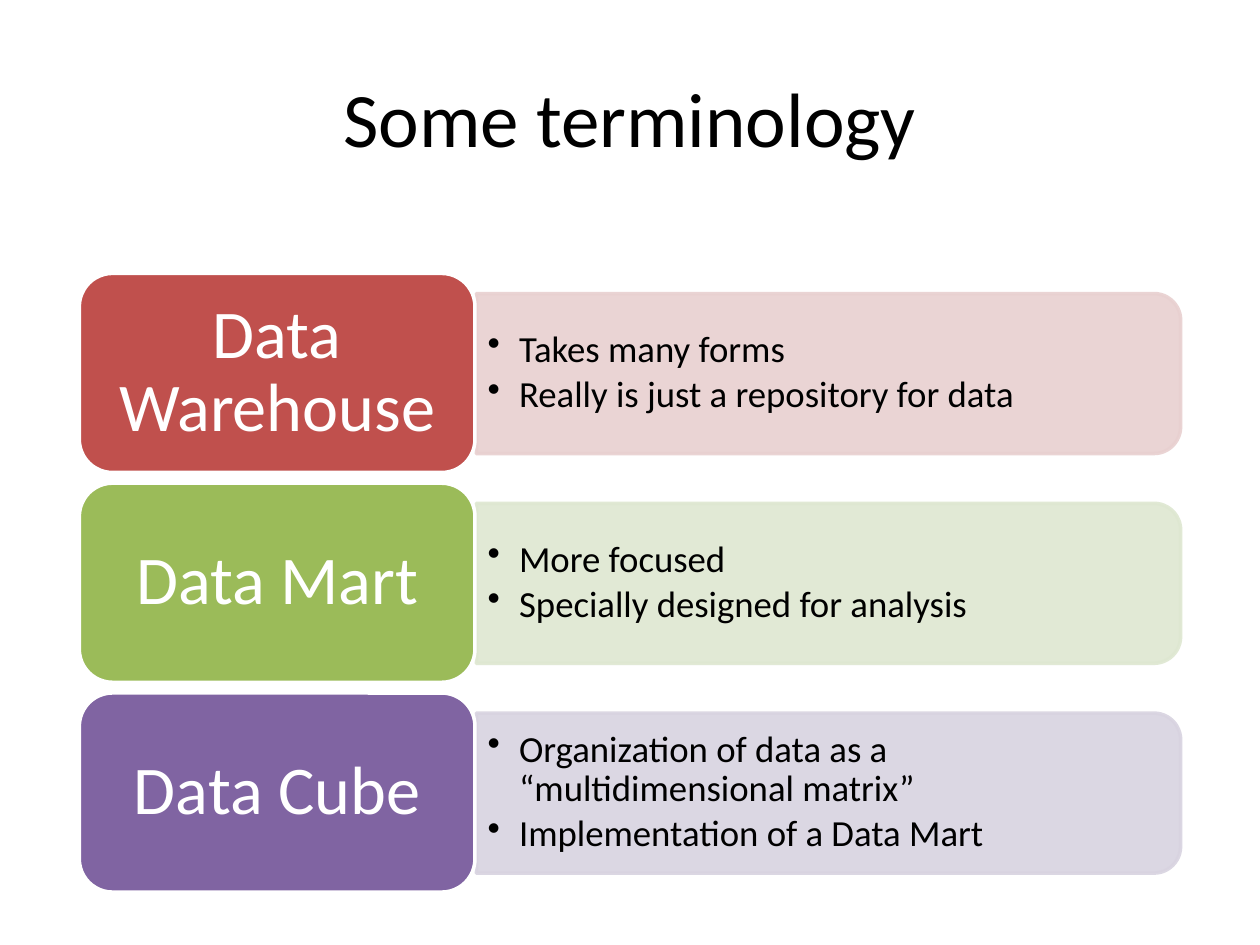
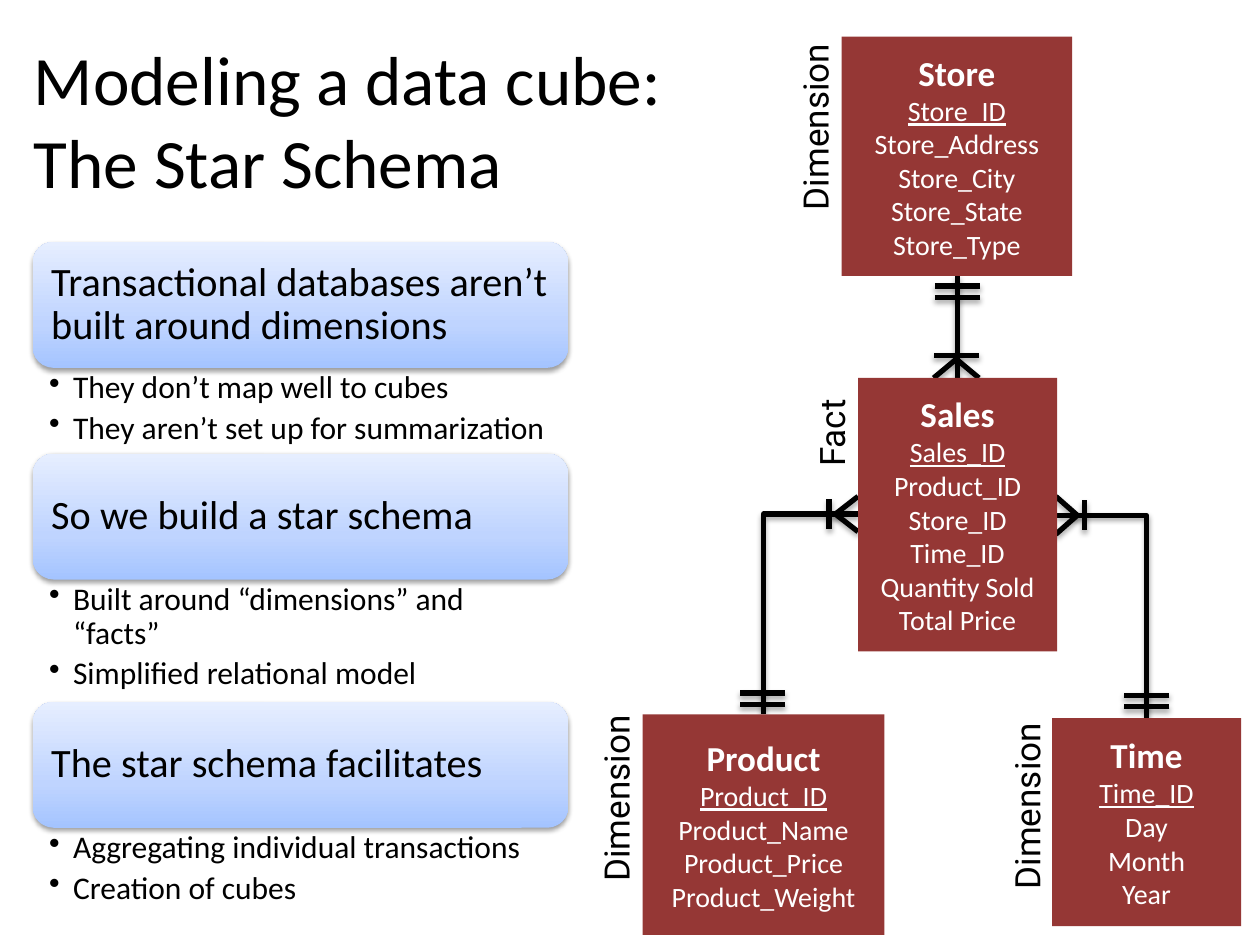
from lxml import etree
from pptx import Presentation
from pptx.dml.color import RGBColor
from pptx.enum import shapes, text
from pptx.oxml import ns
from pptx.util import Inches, Pt

COLORS = {
    "ink": "000000",
    "paper": "FFFFFF",
    "entity": "953735",
    "card": [(0, "A4C4FF"), (35, "BFD4FF"), (100, "E6EEFF")],
}
BODY_FONT, LABEL_FONT = "Calibri", "Roboto"
LEFT, CENTER, RIGHT = text.PP_ALIGN.LEFT, text.PP_ALIGN.CENTER, text.PP_ALIGN.RIGHT
TOP, MIDDLE = text.MSO_ANCHOR.TOP, text.MSO_ANCHOR.MIDDLE
DEFAULT_INSETS = (0.1, 0.05, 0.1, 0.05)

# term, fill, band fill, points
TERMS = [
    ("Data Warehouse", "C0504D", "E8D0D0",
     ["Takes many forms", "Really is just a repository for data"]),
    ("Data Mart", "9BBB59", "DEE7D1",
     ["More focused", "Specially designed for analysis"]),
    ("Data Cube", "8064A2", "D8D3E0",
     ["Organization of data as a “multidimensional matrix”",
      "Implementation of a Data Mart"]),
]

# heading, height of the points below it, points
CARDS = [
    ("Transactional databases aren’t built around dimensions", 0.68,
     ["They don’t map well to cubes", "They aren’t set up for summarization"]),
    ("So we build a star schema", 0.97,
     ["Built around “dimensions” and “facts”", "Simplified relational model"]),
    ("The star schema facilitates", 0.68,
     ["Aggregating individual transactions", "Creation of cubes"]),
]

# name, place, fields (the first is the key)
ENTITIES = [
    ("Product", (5.1, 5.67, 1.92, 1.75),
     ["Product_ID", "Product_Name", "Product_Price", "Product_Weight"]),
    ("Store", (6.68, 0.29, 1.83, 1.9),
     ["Store_ID", "Store_Address", "Store_City", "Store_State", "Store_Type"]),
    ("Time", (8.35, 5.7, 1.5, 1.65), ["Time_ID", "Day", "Month", "Year"]),
    ("Sales", (6.81, 3, 1.58, 2.17),
     ["Sales_ID", "Product_ID", "Store_ID", "Time_ID", "Quantity Sold", "Total Price"]),
]

ROLES = [
    ("Fact", (6.12, 3.33, 0.96, 0.44)),
    ("Dimension", (5.54, 0.96, 1.86, 0.44)),
    ("Dimension", (3.96, 6.29, 1.86, 0.44)),
    ("Dimension", (7.22, 6.35, 1.86, 0.44)),
]

# start, end, has a corner
RELATIONS = [
    ((7.6, 2.19), (7.6, 3), False),
    ((8.39, 4.09), (9.1, 5.7), True),
    ((6.81, 4.08), (6.06, 5.67), True),
]
# point on the entity's edge, direction away from the entity
ONE_ENDS = [((7.6, 2.19), (0, 1)), ((6.05, 5.67), (0, -1)), ((9.1, 5.69), (0, -1))]
# the same, then toe reach, toe spread, bar distance, bar half length
MANY_ENDS = [
    ((7.59, 3), (0, -1), 0.15, 0.18, 0.18, 0.18),
    ((6.81, 4.08), (-1, 0), 0.18, 0.14, 0.23, 0.12),
    ((8.38, 4.09), (1, 0), 0.17, 0.15, 0.23, 0.12),
]


def rgb(value):
    return RGBColor.from_string(value)


def sub(parent, tag, **attributes):
    """Append a DrawingML child element."""
    child = etree.SubElement(parent, ns.qn(tag))
    for name, value in attributes.items():
        child.set(name, str(value))
    return child


def add_shadow(shape, opacity, distance):
    effects = sub(shape._element.spPr, "a:effectLst")
    shadow = sub(effects, "a:outerShdw", blurRad=Pt(3.1), dist=Pt(distance),
                 dir=5400000, rotWithShape=0)
    color = sub(shadow, "a:srgbClr", val=COLORS["ink"])
    sub(color, "a:alpha", val=opacity * 1000)


def style_para(para, size, color="ink", font=BODY_FONT, bold=False, underline=False,
               align=LEFT, spacing=1.0, after=0.0, bullet=0):
    """Format a paragraph; after is a share of the size, bullet a hanging indent."""
    para.alignment = align
    para.line_spacing = spacing
    para.space_after = Pt(size * after)
    if bullet:
        properties = para._p.get_or_add_pPr()
        properties.set("marL", str(Inches(bullet)))
        properties.set("indent", str(-Inches(bullet)))
        sub(properties, "a:buChar", char="•")
    para.font.name = font
    para.font.size = Pt(size)
    para.font.bold = bold
    para.font.underline = underline
    para.font.color.rgb = rgb(COLORS[color])


def write(shape, lines, anchor=MIDDLE, insets=DEFAULT_INSETS):
    """Fill a shape with (wording, style) lines."""
    frame = shape.text_frame
    frame.word_wrap = True
    frame.vertical_anchor = anchor
    (frame.margin_left, frame.margin_top,
     frame.margin_right, frame.margin_bottom) = map(Inches, insets)
    for index, (wording, style) in enumerate(lines):
        para = frame.paragraphs[0] if index == 0 else frame.add_paragraph()
        para.text = wording
        style_para(para, **style)


def add_text(page, place, lines, **options):
    box = page.shapes.add_textbox(*map(Inches, place))
    write(box, lines, **options)
    return box


def add_shape(page, kind, place, fill=None, line=None):
    shape = page.shapes.add_shape(kind, *map(Inches, place))
    if fill:
        shape.shadow.inherit = False
        shape.fill.solid()
        shape.fill.fore_color.rgb = rgb(fill)
    if line:
        shape.line.color.rgb = rgb(line)
        shape.line.width = Pt(2)
    else:
        shape.line.fill.background()
    return shape


def add_title(page, place, wording, size, align):
    add_text(page, place, [(wording, dict(size=size, align=align))])


def add_band(page, place, color):
    band = add_shape(page, shapes.MSO_SHAPE.ROUND_2_SAME_RECTANGLE, place, color, color)
    band.rotation = 90
    for tone in band._element.spPr.iter(ns.qn("a:srgbClr")):
        sub(tone, "a:alpha", val=90000)


def add_card(page, place):
    card = add_shape(page, shapes.MSO_SHAPE.ROUNDED_RECTANGLE, place)
    card.fill.gradient()
    card.fill.gradient_angle = 90
    stops = card._element.spPr.find(".//" + ns.qn("a:gsLst"))
    for stop in list(stops):
        stops.remove(stop)
    for position, color in COLORS["card"]:
        sub(sub(stops, "a:gs", pos=position * 1000), "a:srgbClr", val=color)
    add_shadow(card, 38, 1.6)
    return card


def add_line(page, start, end, corner=False):
    kind = shapes.MSO_CONNECTOR.ELBOW if corner else shapes.MSO_CONNECTOR.STRAIGHT
    line = page.shapes.add_connector(kind, *map(Inches, (*start, *end)))
    if corner:
        line._element.spPr.find(ns.qn("a:prstGeom")).set("prst", "bentConnector2")
    line.line.color.rgb = rgb(COLORS["ink"])
    line.line.width = Pt(3)
    add_shadow(line, 35, 1.8)


def offset(point, direction, along, across):
    """Move along a direction and sideways from it."""
    (x, y), (dx, dy) = point, direction
    return x + dx * along + dy * across, y + dy * along + dx * across


def add_bar(page, point, direction, along, half):
    add_line(page, offset(point, direction, along, -half),
             offset(point, direction, along, half))


def build_terms(page):
    add_title(page, (0.5, 0.3, 9, 1.25), "Some terminology", 44, CENTER)
    pitch = 1.665
    for index, (term, fill, band, points) in enumerate(TERMS):
        shift = index * pitch
        add_band(page, (5.94, 0.17 + shift, 1.27, 5.59), band)
        point_style = dict(size=21, spacing=0.9, after=0.15, bullet=0.25)
        add_text(page, (3.78, 2.39 + shift, 5.53, 1.14),
                 [(point, point_style) for point in points],
                 insets=(0.09, 0.04, 0.09, 0.04))
        tile = add_shape(page, shapes.MSO_SHAPE.ROUNDED_RECTANGLE,
                         (0.63, 2.17 + shift, 3.14, 1.58), fill, COLORS["paper"])
        write(tile, [(term, dict(size=39, color="paper", align=CENTER,
                                 spacing=0.9, after=0.35))],
              insets=(0.16, 0.08, 0.16, 0.08))


def build_cards(page):
    left, top, width, height = 0.26, 1.92, 4.25, 1
    point_style = dict(size=18, spacing=0.9, after=0.2, bullet=0.19)
    for heading, points_height, points in CARDS:
        card = add_card(page, (left, top, width, height))
        write(card, [(heading, dict(size=23, spacing=0.9, after=0.35))],
              insets=(0.1, 0.1, 0.1, 0.1))
        add_text(page, (left, top + height, width, points_height),
                 [(point, point_style) for point in points],
                 anchor=TOP, insets=(0.13, 0.03, 0.18, 0.03))
        top += height + points_height


def build_star(page):
    for start, end, corner in RELATIONS:
        add_line(page, start, end, corner)
    for point, direction in ONE_ENDS:
        for along in (0.08, 0.17):
            add_bar(page, point, direction, along, 0.18)
    for point, direction, reach, spread, bar, half in MANY_ENDS:
        for side in (-spread, spread):
            add_line(page, offset(point, direction, reach, 0),
                     offset(point, direction, 0, side))
        add_bar(page, point, direction, bar, half)
    for name, place, fields in ENTITIES:
        entity = add_shape(page, shapes.MSO_SHAPE.RECTANGLE, place, COLORS["entity"])
        common = dict(color="paper", align=CENTER)
        lines = [(name, dict(size=20, bold=True, **common))]
        lines += [(field, dict(size=16, underline=field == fields[0], **common))
                  for field in fields]
        write(entity, lines)
    for role, place in ROLES:
        label = add_text(page, place,
                         [(role, dict(size=20, font=LABEL_FONT, align=RIGHT))], anchor=TOP)
        label.rotation = 270


def build_schema(page):
    add_title(page, (0.17, 0.32, 9.51, 1.25),
              "Modeling a data cube:\vThe Star Schema", 39.6, LEFT)
    build_cards(page)
    build_star(page)


def main():
    deck = Presentation()
    deck.slide_width, deck.slide_height = Inches(10), Inches(7.5)
    for build in (build_terms, build_schema):
        build(deck.slides.add_slide(deck.slide_layouts[6]))
    deck.save("out.pptx")


if __name__ == "__main__":
    main()
